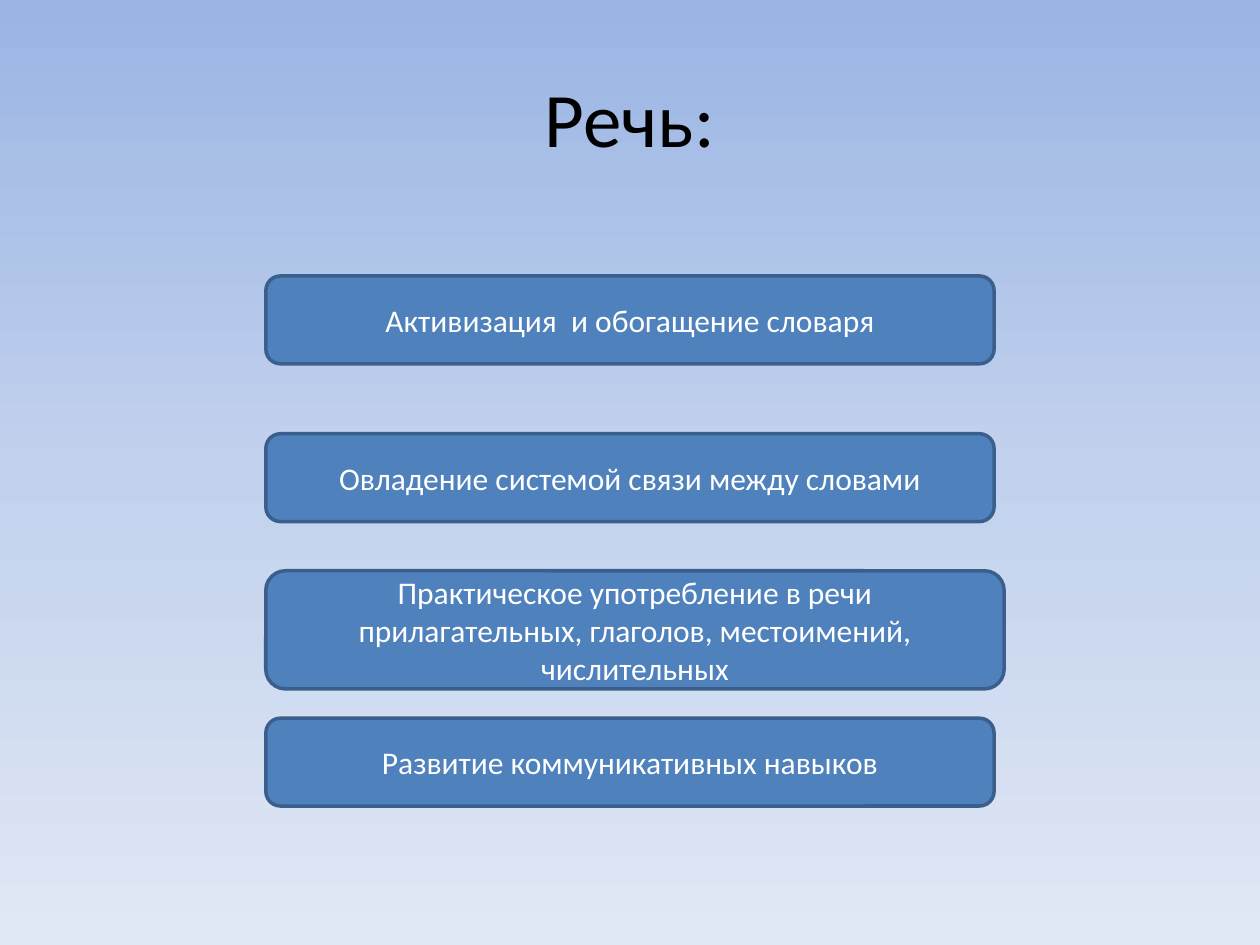
from copy import deepcopy

from pptx import Presentation
from pptx.dml.color import RGBColor
from pptx.enum.shapes import MSO_SHAPE
from pptx.enum.text import MSO_ANCHOR, PP_ALIGN
from pptx.oxml.ns import qn
from pptx.util import Inches, Pt

WIDTH, HEIGHT = Inches(10), Inches(7.5)
COLORS = {
    "sky_top": "9AB5E4",
    "sky_middle": "C2D1ED",
    "sky_bottom": "E1E8F5",
    "box": "4F81BD",
    "border": "3A5F8C",
    "title": "000000",
    "label": "FFFFFF",
}
BOX_LEFT = 0.211
BOX_SIZE = (0.578, 0.093)
TALL_BOX_SIZE = (0.586, 0.125)
BOXES = [
    (0.292, BOX_SIZE, "Активизация  и обогащение словаря"),
    (0.459, BOX_SIZE, "Овладение системой связи между словами"),
    (0.604, TALL_BOX_SIZE, "Практическое употребление в речи прилагательных, "
                           "глаголов, местоимений, числительных"),
    (0.76, BOX_SIZE, "Развитие коммуникативных навыков"),
]


def color(name):
    """Return the named colour."""
    return RGBColor.from_string(COLORS[name])


def place(left, top, width, height):
    """Turn shares of the slide's size into lengths."""
    return (int(left * WIDTH), int(top * HEIGHT),
            int(width * WIDTH), int(height * HEIGHT))


def paint_background(slide):
    """Fill the background with a three-stop vertical gradient."""
    fill = slide.background.fill
    fill.gradient()
    fill.gradient_angle = 270
    stop_list = next(slide.element.iter(qn("a:gsLst")))
    stop_list.insert(1, deepcopy(stop_list[0]))
    names = ("sky_top", "sky_middle", "sky_bottom")
    for index, (stop, name) in enumerate(zip(fill.gradient_stops, names)):
        stop.position = index / 2
        stop.color.rgb = color(name)


def write_text(shape, text, size, color_name):
    """Write one centred paragraph into a shape."""
    frame = shape.text_frame
    frame.word_wrap = True
    frame.vertical_anchor = MSO_ANCHOR.MIDDLE
    paragraph = frame.paragraphs[0]
    paragraph.text = text
    paragraph.alignment = PP_ALIGN.CENTER
    paragraph.font.name = "Calibri"
    paragraph.font.size = Pt(size)
    paragraph.font.color.rgb = color(color_name)


def add_title(slide, text):
    """Add the slide heading."""
    shape = slide.shapes.add_textbox(*place(0.05, 0.04, 0.9, 1 / 6))
    write_text(shape, text, 44, "title")


def add_box(slide, top, size, text):
    """Add a rounded box with a label."""
    shape = slide.shapes.add_shape(
        MSO_SHAPE.ROUNDED_RECTANGLE, *place(BOX_LEFT, top, *size))
    shape.shadow.inherit = False
    shape.fill.solid()
    shape.fill.fore_color.rgb = color("box")
    shape.line.color.rgb = color("border")
    shape.line.width = Pt(2)
    write_text(shape, text, 18, "label")


def main():
    """Build and save the presentation."""
    presentation = Presentation()
    presentation.slide_width, presentation.slide_height = WIDTH, HEIGHT
    slide = presentation.slides.add_slide(presentation.slide_layouts[6])
    paint_background(slide)
    add_title(slide, "Речь:")
    for top, size, text in BOXES:
        add_box(slide, top, size, text)
    presentation.save("out.pptx")


if __name__ == "__main__":
    main()
